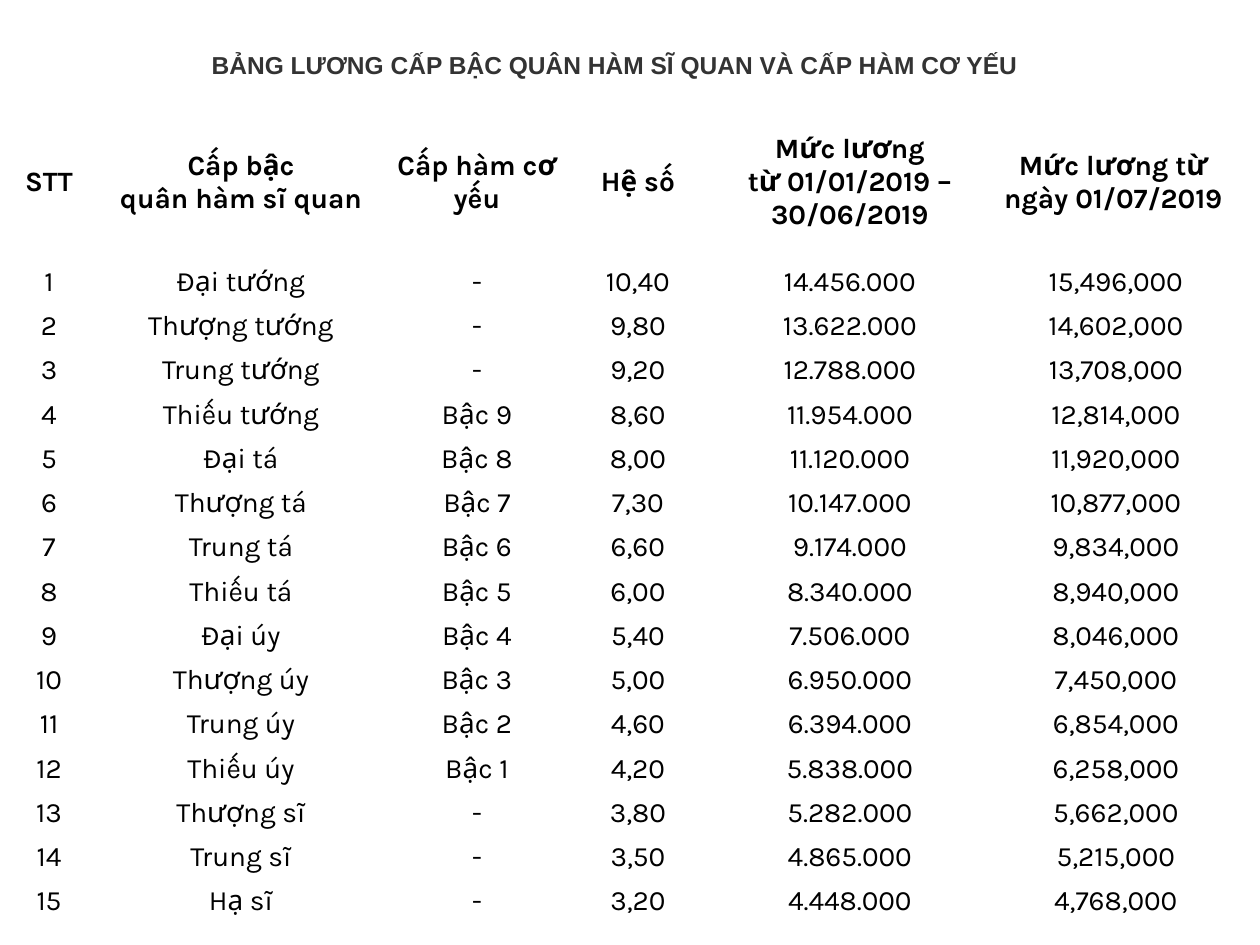
from pptx import Presentation
from pptx.dml.color import RGBColor
from pptx.enum.text import MSO_ANCHOR, MSO_AUTO_SIZE, PP_ALIGN
from pptx.util import Emu, Pt

CENTER = PP_ALIGN.CENTER
LEFT = PP_ALIGN.LEFT
MIDDLE = MSO_ANCHOR.MIDDLE
TOP = MSO_ANCHOR.TOP
NO_AUTOFIT = MSO_AUTO_SIZE.NONE

EMU_PER_PX = 914400 / 126
TITLE_ONLY = 5

COLORS = {"paper": "FFFFFF", "title": "333333", "text": "000000"}

TITLE = "BẢNG LƯƠNG CẤP BẬC QUÂN HÀM SĨ QUAN VÀ CẤP HÀM CƠ YẾU"
COLUMN_WIDTHS = [88, 296, 176, 146, 278, 249]
HEADER_HEIGHT = 155
BODY_HEIGHT = 664
NEW_SALARY_INDENT = 5

HEADERS = [
    "STT",
    "Cấp bậc\vquân hàm sĩ quan",
    "Cấp hàm cơ yếu",
    "Hệ số",
    "Mức lương\vtừ 01/01/2019 – 30/06/2019",
    "Mức lương từ ngày 01/07/2019",
]
RANKS = [
    ("Đại tướng", "-", "10,40", "14.456.000", "15,496,000"),
    ("Thượng tướng", "-", "9,80", "13.622.000", "14,602,000"),
    ("Trung tướng", "-", "9,20", "12.788.000", "13,708,000"),
    ("Thiếu tướng", "Bậc 9", "8,60", "11.954.000", "12,814,000"),
    ("Đại tá", "Bậc 8", "8,00", "11.120.000", "11,920,000"),
    ("Thượng tá", "Bậc 7", "7,30", "10.147.000", "10,877,000"),
    ("Trung tá", "Bậc 6", "6,60", "9.174.000", "9,834,000"),
    ("Thiếu tá", "Bậc 5", "6,00", "8.340.000", "8,940,000"),
    ("Đại úy", "Bậc 4", "5,40", "7.506.000", "8,046,000"),
    ("Thượng úy", "Bậc 3", "5,00", "6.950.000", "7,450,000"),
    ("Trung úy", "Bậc 2", "4,60", "6.394.000", "6,854,000"),
    ("Thiếu úy", "Bậc 1", "4,20", "5.838.000", "6,258,000"),
    ("Thượng sĩ", "-", "3,80", "5.282.000", "5,662,000"),
    ("Trung sĩ", "-", "3,50", "4.865.000", "5,215,000"),
    ("Hạ sĩ", "-", "3,20", "4.448.000", "4,768,000"),
]


def px(length):
    return Emu(round(length * EMU_PER_PX))


def paint(fill, color):
    fill.solid()
    fill.fore_color.rgb = RGBColor.from_string(COLORS[color])


def write(frame, text, font_name, size, color, bold, alignment):
    frame.text = text
    for para in frame.paragraphs:
        para.alignment = alignment
        for span in para.runs:
            span.font.name = font_name
            span.font.size = Pt(size)
            span.font.bold = bold
            span.font.color.rgb = RGBColor.from_string(COLORS[color])


def set_title(page):
    title = page.shapes.title
    title.left, title.top, title.width, title.height = map(px, (199, 42, 903, 72))
    paint(title.fill, "paper")
    frame = title.text_frame
    frame.word_wrap = True
    frame.auto_size = NO_AUTOFIT
    frame.vertical_anchor = TOP
    frame.margin_top = px(8)
    write(frame, TITLE, "Arial", 14, "title", True, LEFT)


def fill_cell(cell, text, bold, indent):
    paint(cell.fill, "paper")
    cell.vertical_anchor = MIDDLE
    cell.margin_left = px(indent)
    cell.margin_top = cell.margin_right = cell.margin_bottom = 0
    write(cell.text_frame, text, "Karla", 16, "text", bold, CENTER)


def add_salary_table(page):
    rows = [HEADERS] + [(str(number), *rank) for number, rank in enumerate(RANKS, 1)]
    table = page.shapes.add_table(
        len(rows), len(HEADERS), px(5), px(105),
        px(sum(COLUMN_WIDTHS)), px(HEADER_HEIGHT + BODY_HEIGHT),
    ).table
    for column, width in zip(table.columns, COLUMN_WIDTHS):
        column.width = px(width)
    for row_index, values in enumerate(rows):
        is_header = row_index == 0
        height = HEADER_HEIGHT if is_header else BODY_HEIGHT / len(RANKS)
        table.rows[row_index].height = px(height)
        for column_index, text in enumerate(values):
            is_new_salary = column_index == len(HEADERS) - 1 and not is_header
            indent = NEW_SALARY_INDENT if is_new_salary else 0
            fill_cell(table.cell(row_index, column_index), text, is_header, indent)


def main():
    deck = Presentation()
    deck.slide_width, deck.slide_height = px(1260), px(945)
    page = deck.slides.add_slide(deck.slide_layouts[TITLE_ONLY])
    paint(page.background.fill, "paper")
    set_title(page)
    add_salary_table(page)
    deck.save("out.pptx")


if __name__ == "__main__":
    main()
